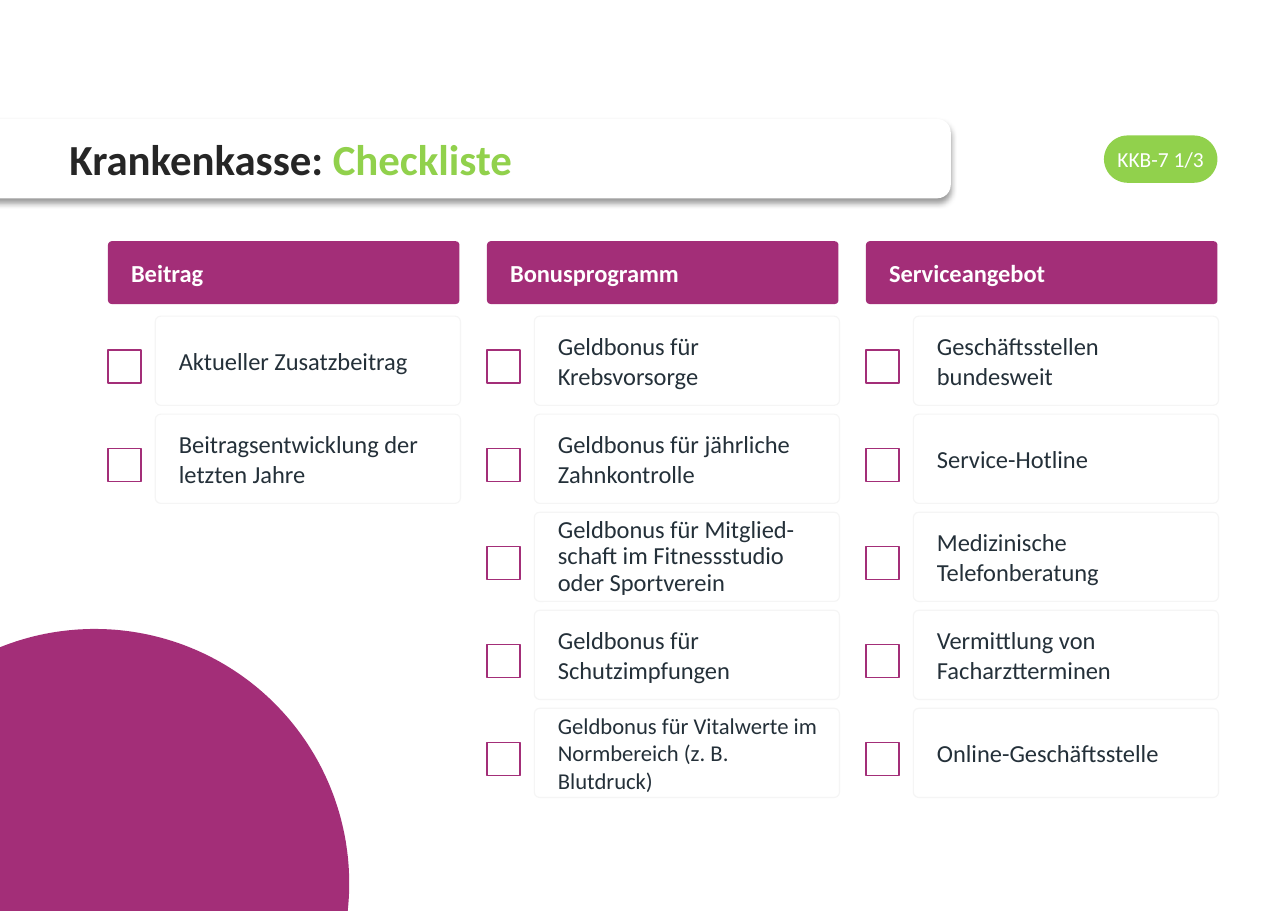
"""Build the health insurance checklist slide."""
from math import acos, asin, cos, sin

from lxml.etree import SubElement
from pptx import Presentation
from pptx.dml.color import RGBColor
from pptx.enum.shapes import MSO_SHAPE as Geometry
from pptx.enum.text import MSO_ANCHOR as Anchor, MSO_AUTO_SIZE as AutoSize, PP_ALIGN as Align
from pptx.oxml.ns import qn
from pptx.util import Inches, Pt

PURPLE = RGBColor(0xA3, 0x2E, 0x78)
GREEN = RGBColor(0x91, 0xD1, 0x4C)
WHITE = RGBColor(0xFF, 0xFF, 0xFF)
BLACK = RGBColor(0x26, 0x26, 0x26)
SLATE = RGBColor(0x24, 0x30, 0x39)
PALE = RGBColor(0xF5, 0xF5, 0xF5)

WIDTH, HEIGHT = 11.69, 8.27
COLUMN_LEFT, COLUMN_STEP = 0.98, 3.44
ROW_TOP, ROW_STEP = 2.87, 0.89

CHECKLIST = {
    "Beitrag": [
        "Aktueller Zusatzbeitrag",
        "Beitragsentwicklung der letzten Jahre",
    ],
    "Bonusprogramm": [
        "Geldbonus für Krebsvorsorge",
        "Geldbonus für jährliche Zahnkontrolle",
        "Geldbonus für Mitglied-schaft im Fitnessstudio oder Sportverein",
        "Geldbonus für Schutzimpfungen",
        "Geldbonus für Vitalwerte im Normbereich (z. B. Blutdruck)",
    ],
    "Serviceangebot": [
        "Geschäftsstellen bundesweit",
        "Service-Hotline",
        "Medizinische Telefonberatung",
        "Vermittlung von Facharztterminen",
        "Online-Geschäftsstelle",
    ],
}
TIGHT_SPACING = {("Bonusprogramm", 2): 0.9}
SMALL_SIZES = {("Bonusprogramm", 4): 14.8}


class ChecklistSlide:
    """Hold the checklist style and draw its elements on one slide."""

    font_name = "Calibri"

    def __init__(self, presentation):
        self.slide = presentation.slides.add_slide(presentation.slide_layouts[5])
        self.shapes = self.slide.shapes

    def apply(self, target, **values):
        for attribute, value in values.items():
            setattr(target, attribute, value)

    def paint(self, shape, fill, line=None, weight=1):
        shape.shadow.inherit = False
        shape.fill.solid()
        shape.fill.fore_color.rgb = fill
        if line is None:
            shape.line.fill.background()
        else:
            shape.line.color.rgb = line
            shape.line.width = Pt(weight)

    def panel(self, box, fill, line=None, weight=1, geometry=Geometry.ROUNDED_RECTANGLE, radius=0.06):
        shape = self.shapes.add_shape(geometry, *map(Inches, box))
        if geometry == Geometry.ROUNDED_RECTANGLE:
            shape.adjustments[0] = radius
        self.paint(shape, fill, line, weight)
        return shape

    def label(self, shape, runs, size, bold=False, align=Align.LEFT, spacing=1.0, insets=(0.2, 0.12)):
        frame = shape.text_frame
        self.apply(
            frame, word_wrap=True, auto_size=AutoSize.NONE, vertical_anchor=Anchor.MIDDLE,
            margin_left=Inches(insets[0]), margin_right=Inches(insets[1]), margin_top=0, margin_bottom=0,
        )
        paragraph = frame.paragraphs[0]
        self.apply(paragraph, alignment=align, line_spacing=spacing)
        for text, color in runs:
            run = paragraph.add_run()
            run.text = text
            self.apply(run.font, name=self.font_name, size=Pt(size), bold=bold)
            run.font.color.rgb = color

    def corner_circle(self, center_x, center_y, radius):
        start = acos(-center_x / radius)
        end = asin((center_y - HEIGHT) / radius)
        steps = 90
        angles = [start + (end - start) * step / steps for step in range(steps + 1)]
        arc = [
            (Inches(center_x + radius * cos(angle)), Inches(center_y - radius * sin(angle)))
            for angle in angles
        ]
        outline = self.shapes.build_freeform(0, Inches(HEIGHT))
        outline.add_line_segments(arc, close=True)
        self.paint(outline.convert_to_shape(), PURPLE)

    def title(self, runs):
        banner = self.panel((-0.83, 1.08, 9.46, 0.72), WHITE, radius=0.17)
        effects = banner.element.spPr.find(qn("a:effectLst"))
        shadow = SubElement(
            effects, qn("a:outerShdw"), blurRad=str(Pt(4)), dist=str(Pt(3)),
            dir="5400000", algn="t", rotWithShape="0",
        )
        black = SubElement(shadow, qn("a:srgbClr"), val="000000")
        SubElement(black, qn("a:alpha"), val="40000")
        heading = self.shapes.title
        self.apply(heading, left=Inches(0.63), top=Inches(1.08), width=Inches(7.9), height=Inches(0.72))
        banner.element.addnext(heading.element)
        self.label(heading, runs, 28, bold=True, insets=(0, 0))

    def badge(self, text):
        pill = self.panel((10.02, 1.23, 1.03, 0.43), GREEN, radius=0.5)
        self.label(pill, [(text, WHITE)], 14, align=Align.CENTER, insets=(0, 0))

    def header(self, left, text):
        self.label(self.panel((left, 2.19, 3.19, 0.57), PURPLE), [(text, WHITE)], 16, bold=True)

    def item(self, left, top, text, size, spacing):
        card = self.panel((left + 0.43, top, 2.77, 0.81), WHITE, PALE, 0.75)
        tint = card.element.spPr.find(qn("a:solidFill")).find(qn("a:srgbClr"))
        SubElement(tint, qn("a:alpha"), val="70000")
        self.label(card, [(text, SLATE)], size, spacing=spacing)
        self.panel((left, top + 0.31, 0.3, 0.3), WHITE, PURPLE, geometry=Geometry.RECTANGLE)


def main():
    presentation = Presentation()
    presentation.slide_width, presentation.slide_height = Inches(WIDTH), Inches(HEIGHT)
    checklist = ChecklistSlide(presentation)
    checklist.corner_circle(0.86, 8.02, 2.31)
    checklist.badge("KKB-7 1/3")
    checklist.title([("Krankenkasse: ", BLACK), ("Checkliste", GREEN)])
    for column, (topic, criteria) in enumerate(CHECKLIST.items()):
        left = COLUMN_LEFT + column * COLUMN_STEP
        checklist.header(left, topic)
        for row, criterion in enumerate(criteria):
            size = SMALL_SIZES.get((topic, row), 16)
            spacing = TIGHT_SPACING.get((topic, row), 1.0)
            checklist.item(left, ROW_TOP + row * ROW_STEP, criterion, size, spacing)
    presentation.save("out.pptx")


if __name__ == "__main__":
    main()
